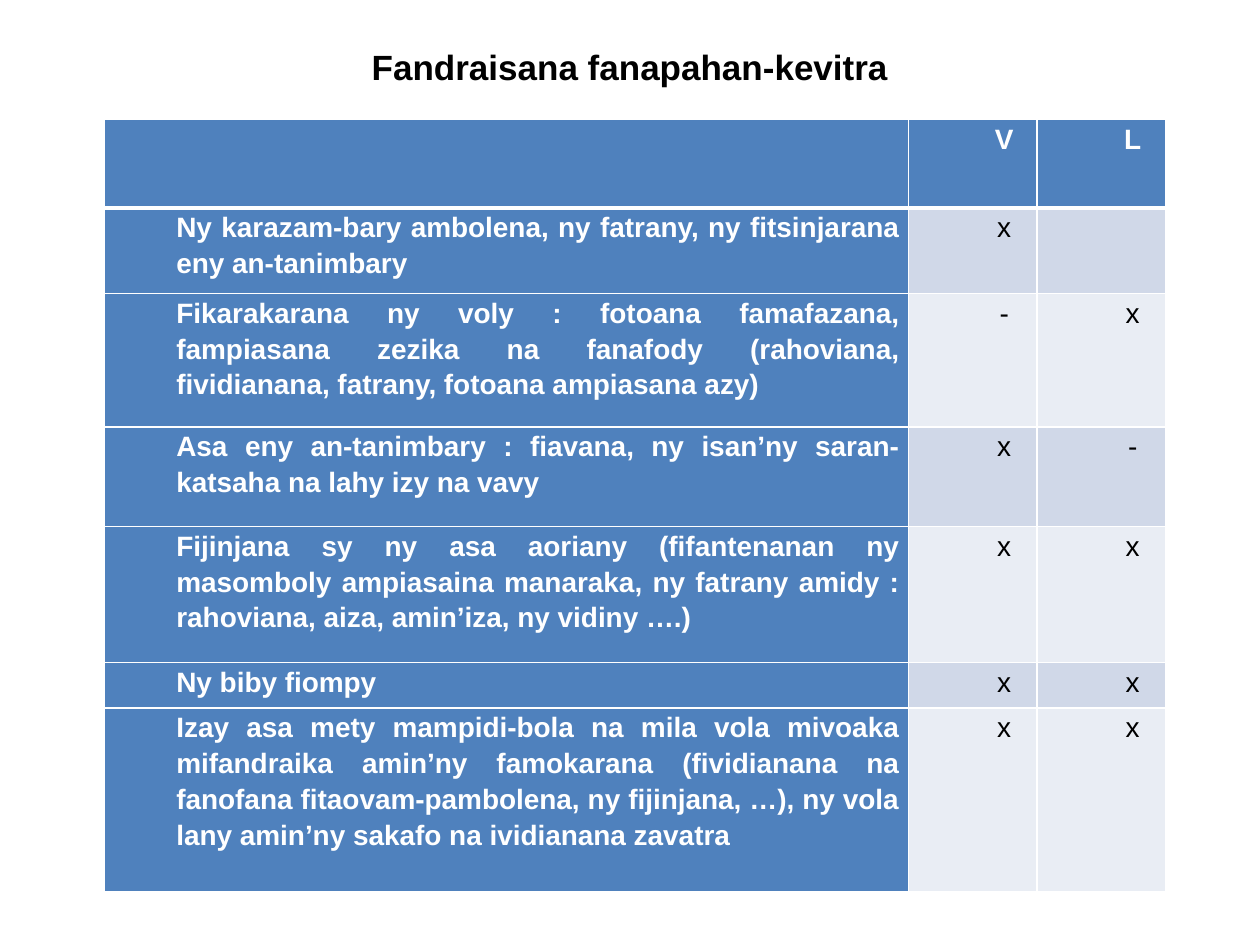
from lxml.etree import SubElement as Sub
from pptx import Presentation as Deck
from pptx.dml.color import RGBColor as Rgb
from pptx.enum.text import MSO_ANCHOR as Anchor, PP_ALIGN as Align
from pptx.oxml.ns import qn
from pptx.util import Inches, Pt

WIDE, HIGH = Inches(10), Inches(7.5)
FONT = "Arial"
HUES = {
    "head": "4F81BD",
    "odd": "D0D8E8",
    "even": "E9EDF4",
    "light": "FFFFFF",
    "dark": "000000",
}

# Shares of the slide's size, in percent
COLS = [63.8, 10.2, 10.2]
ROWS = [9.33, 9.07, 14.13, 10.53, 14.4, 4.8, 19.47]

DATA = [
    ("", "V", "L"),
    ("Ny karazam-bary ambolena, ny fatrany, ny fitsinjarana eny an-tanimbary",
     "x", ""),
    ("Fikarakarana ny voly : fotoana famafazana, fampiasana zezika na fanafody "
     "(rahoviana, fividianana, fatrany, fotoana ampiasana azy)", "-", "x"),
    ("Asa eny an-tanimbary : fiavana, ny isan’ny saran-katsaha na lahy izy na vavy",
     "x", "-"),
    ("Fijinjana sy ny asa aoriany (fifantenanan ny masomboly ampiasaina manaraka, "
     "ny fatrany amidy : rahoviana, aiza, amin’iza, ny vidiny ….)", "x", "x"),
    ("Ny biby fiompy", "x", "x"),
    ("Izay asa mety mampidi-bola na mila vola mivoaka mifandraika amin’ny "
     "famokarana (fividianana na fanofana fitaovam-pambolena, ny fijinjana, …), "
     "ny vola lany amin’ny sakafo na ividianana zavatra", "x", "x"),
]


def across(part):
    return round(WIDE * part / 100)


def down(part):
    return round(HIGH * part / 100)


def style(para, size, hue, bold, align):
    para.alignment = align
    font = para.font
    font.name, font.size, font.bold = FONT, Pt(size), bold
    font.color.rgb = Rgb.from_string(HUES[hue])


def add_title(slide, text):
    box = slide.shapes.add_textbox(across(5), down(4), across(90), down(10.27))
    frame = box.text_frame
    frame.word_wrap = True
    frame.vertical_anchor = Anchor.MIDDLE
    # A deep lower margin lifts the line clear of the table
    frame.margin_top, frame.margin_bottom = Inches(0.05), Inches(0.36)
    frame.text = text
    style(frame.paragraphs[0], 20, "dark", True, Align.CENTER)


def add_edges(cell, base):
    props = cell._tc.get_or_add_tcPr()
    for side, width in (("L", 1), ("R", 1), ("T", 1), ("B", base)):
        line = Sub(props, qn(f"a:ln{side}"), w=str(Pt(width)))
        fill = Sub(line, qn("a:solidFill"))
        Sub(fill, qn("a:srgbClr"), val=HUES["light"])


def fill_cell(cell, text, row, col):
    # Borders go before the fill in the cell's properties;
    # both sides of the header rule are thick
    add_edges(cell, 3 if row == 0 else 1)
    if row == 1:
        cell._tc.tcPr.find(qn("a:lnT")).set("w", str(Pt(3)))
    title = row == 0 or col == 0
    hue = "head" if title else "odd" if row % 2 else "even"
    cell.fill.solid()
    cell.fill.fore_color.rgb = Rgb.from_string(HUES[hue])
    if not text:
        return
    cell.margin_left = cell.margin_right = Inches(0.07)
    cell.margin_top = cell.margin_bottom = 0
    cell.text = text
    para = cell.text_frame.paragraphs[0]
    para.line_spacing = 1.15
    para._p.get_or_add_pPr().set("marL", str(Inches(0.5)))
    style(para, 16, "light" if title else "dark", title,
          Align.CENTER if col else Align.JUSTIFY)


def add_grid(slide):
    frame = slide.shapes.add_table(
        len(ROWS), len(COLS), across(8.3), down(12.67),
        across(sum(COLS)), down(sum(ROWS)))
    table = frame.table
    for col, part in zip(table.columns, COLS):
        col.width = across(part)
    for row, part in zip(table.rows, ROWS):
        row.height = down(part)
    for r, line in enumerate(DATA):
        for c, text in enumerate(line):
            fill_cell(table.cell(r, c), text, r, c)


def main():
    deck = Deck()
    deck.slide_width, deck.slide_height = WIDE, HIGH
    slide = deck.slides.add_slide(deck.slide_layouts[6])
    add_title(slide, "Fandraisana fanapahan-kevitra")
    add_grid(slide)
    deck.save("out.pptx")


if __name__ == "__main__":
    main()
